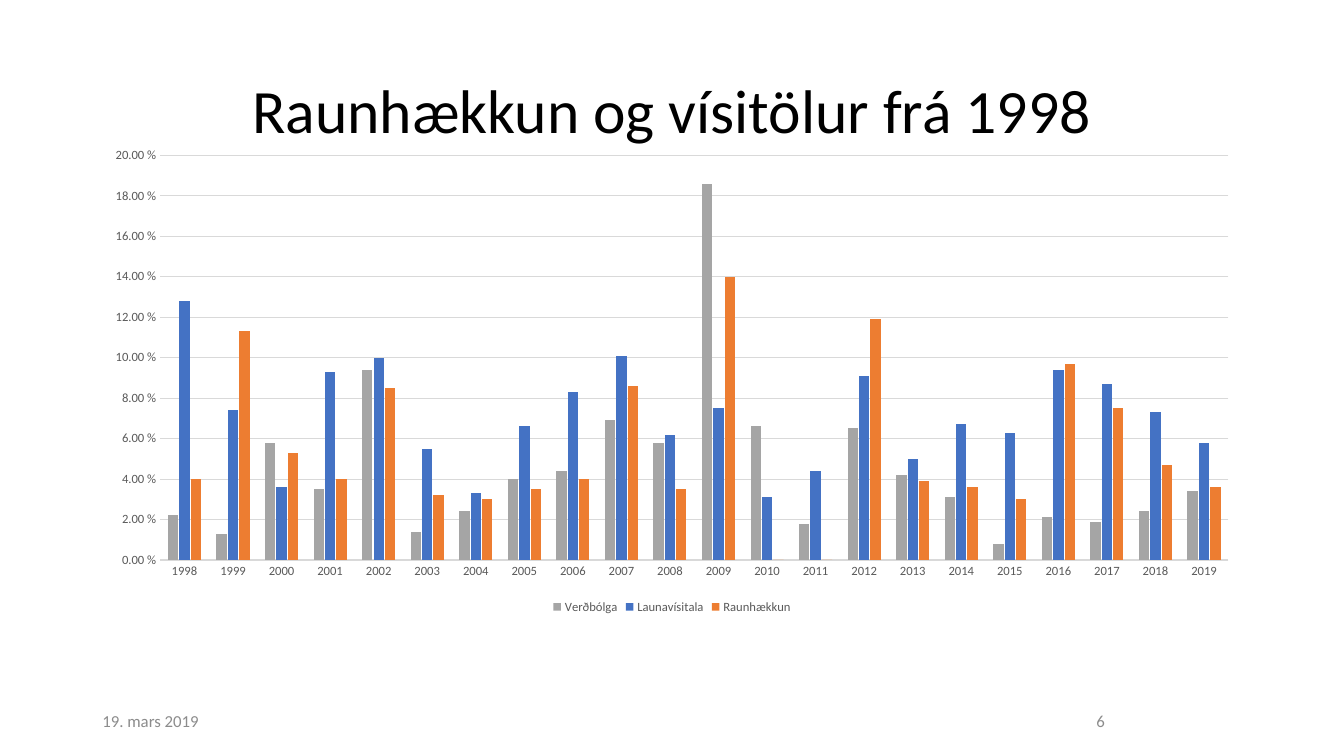
from dataclasses import dataclass

import pptx
import pptx.chart.data
import pptx.dml.color
import pptx.enum.chart
import pptx.enum.text
import pptx.util

Cm = pptx.util.Cm
Pt = pptx.util.Pt
RGBColor = pptx.dml.color.RGBColor
Align = pptx.enum.text.PP_ALIGN

BLACK = RGBColor(0x00, 0x00, 0x00)
FOOTER_GRAY = RGBColor(0x8C, 0x8C, 0x8C)
LABEL_GRAY = RGBColor(0x59, 0x59, 0x59)
GRID_GRAY = RGBColor(0xD9, 0xD9, 0xD9)
GRAY = RGBColor(0xA5, 0xA5, 0xA5)
BLUE = RGBColor(0x44, 0x72, 0xC4)
ORANGE = RGBColor(0xED, 0x7D, 0x31)
FONT = "Calibri"
MARGIN = 2.33
CONTENT_WIDTH = 29.21


@dataclass
class Series:
    name: str
    order: int
    color: RGBColor
    percents: list[float]


@dataclass
class Footer:
    text: str
    left: float
    align: Align


YEARS = [str(year) for year in range(1998, 2020)]
SERIES = [
    Series("Verðbólga", 1, GRAY,
           [2.2, 1.3, 5.8, 3.5, 9.4, 1.4, 2.4, 4.0, 4.4, 6.9, 5.8,
            18.6, 6.6, 1.8, 6.5, 4.2, 3.1, 0.8, 2.1, 1.9, 2.4, 3.4]),
    Series("Launavísitala", 2, BLUE,
           [12.8, 7.4, 3.6, 9.3, 10.0, 5.5, 3.3, 6.6, 8.3, 10.1, 6.2,
            7.5, 3.1, 4.4, 9.1, 5.0, 6.7, 6.3, 9.4, 8.7, 7.3, 5.8]),
    Series("Raunhækkun", 0, ORANGE,
           [4.0, 11.3, 5.3, 4.0, 8.5, 3.2, 3.0, 3.5, 4.0, 8.6, 3.5,
            14.0, 0, 0, 11.9, 3.9, 3.6, 3.0, 9.7, 7.5, 4.7, 3.6]),
]
FOOTERS = [
    Footer("19. mars 2019", MARGIN, Align.LEFT),
    Footer("6", 23.93, Align.CENTER),
]


def set_font(font, size: float, color: RGBColor) -> None:
    font.name = FONT
    font.size = Pt(size)
    font.bold = False
    font.color.rgb = color


def write_text(tf, text: str, *, size: float, color: RGBColor, align: Align,
               line_spacing: float = 1.0, space_after: float = 0) -> None:
    tf.word_wrap = True
    tf.vertical_anchor = pptx.enum.text.MSO_ANCHOR.MIDDLE
    p = tf.paragraphs[0]
    p.alignment = align
    p.line_spacing = line_spacing
    p.space_after = Pt(space_after)
    r = p.add_run()
    r.text = text
    set_font(r.font, size, color)


def add_footer(slide, footer: Footer) -> None:
    sp = slide.shapes.add_textbox(Cm(footer.left), Cm(17.65), Cm(7.62), Cm(1.02))
    write_text(sp.text_frame, footer.text, size=12, color=FOOTER_GRAY,
               align=footer.align, space_after=6)


def format_line(line) -> None:
    line.color.rgb = GRID_GRAY
    line.width = Pt(0.75)


def add_index_chart(slide) -> None:
    data = pptx.chart.data.CategoryChartData(number_format="0.0%")
    data.categories = YEARS
    for series in SERIES:
        data.add_series(series.name, [round(v / 100, 3) for v in series.percents])
    chart = slide.shapes.add_chart(
        pptx.enum.chart.XL_CHART_TYPE.COLUMN_CLUSTERED,
        Cm(MARGIN), Cm(3.49), Cm(CONTENT_WIDTH), Cm(12.09), data).chart
    set_font(chart.font, 10, BLACK)
    chart.has_title = False
    chart.has_legend = True
    chart.legend.position = pptx.enum.chart.XL_LEGEND_POSITION.BOTTOM
    chart.legend.include_in_layout = False
    set_font(chart.legend.font, 9, LABEL_GRAY)

    plot = chart.plots[0]
    plot.vary_by_categories = False
    plot.gap_width = 150
    plot.overlap = -10
    for bars, series in zip(list(plot.series), SERIES):
        bars.format.fill.solid()
        bars.format.fill.fore_color.rgb = series.color
        bars.invert_if_negative = False
        bars._element.idx.val = series.order
        bars._element.order.val = series.order

    for axis in (chart.category_axis, chart.value_axis):
        axis.major_tick_mark = pptx.enum.chart.XL_TICK_MARK.NONE
        axis.minor_tick_mark = pptx.enum.chart.XL_TICK_MARK.NONE
        set_font(axis.tick_labels.font, 9, LABEL_GRAY)
    format_line(chart.category_axis.format.line)
    values = chart.value_axis
    values.minimum_scale = 0
    values.maximum_scale = 0.2
    values.major_unit = 0.02
    values.has_major_gridlines = True
    format_line(values.major_gridlines.format.line)
    values.format.line.fill.background()
    values.tick_labels.number_format = "0.00\\ %"
    values.tick_labels.number_format_is_linked = False


def main() -> None:
    prs = pptx.Presentation()
    prs.slide_width = Cm(33.87)
    prs.slide_height = Cm(19.05)
    slide = prs.slides.add_slide(prs.slide_layouts[5])
    title = slide.shapes.title
    title.left, title.top = Cm(MARGIN), Cm(1.02)
    title.width, title.height = Cm(CONTENT_WIDTH), Cm(3.68)
    write_text(title.text_frame, "Raunhækkun og vísitölur frá 1998", size=44,
               color=BLACK, align=Align.CENTER, line_spacing=0.9)
    for footer in FOOTERS:
        add_footer(slide, footer)
    add_index_chart(slide)
    prs.save("out.pptx")


if __name__ == "__main__":
    main()
